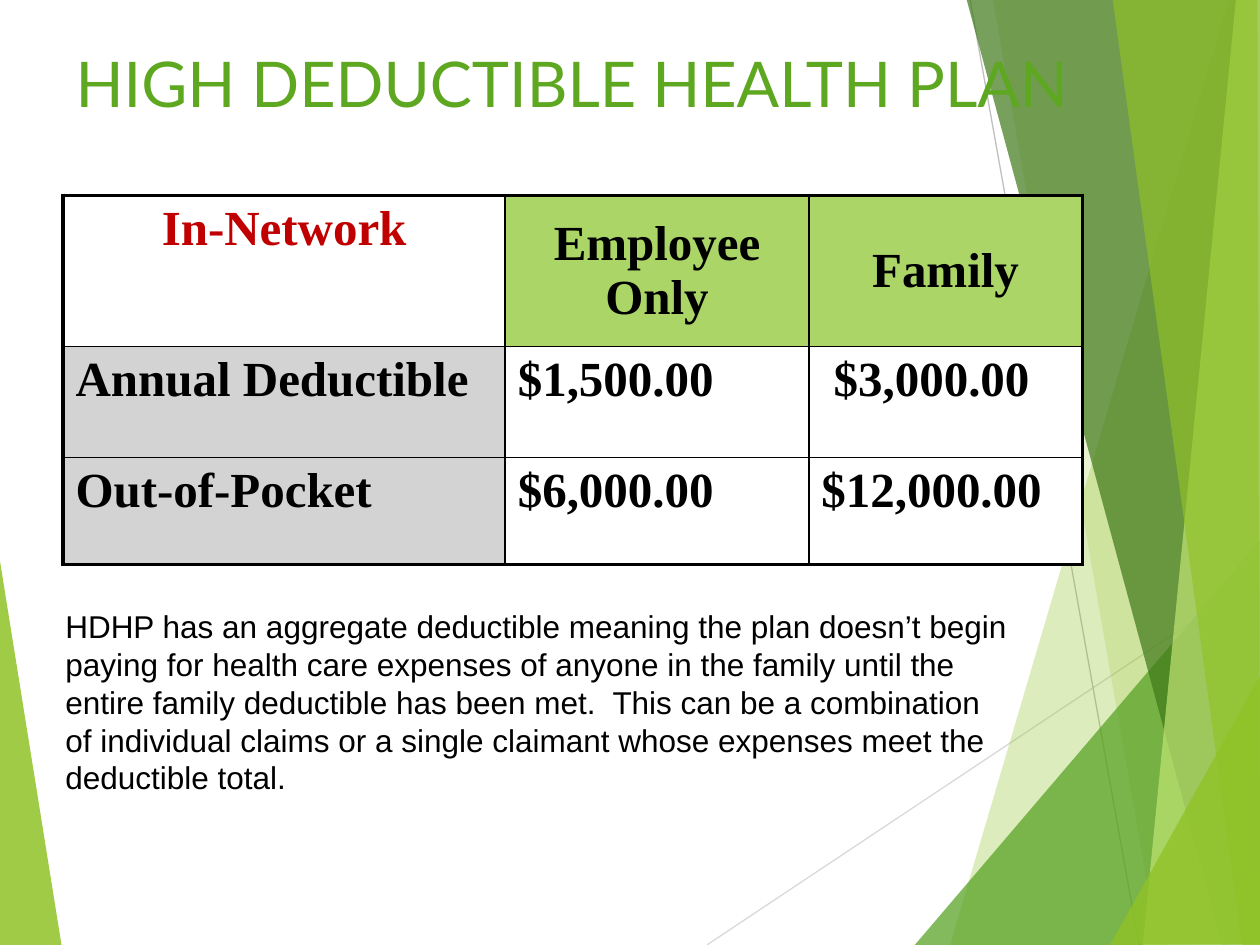
"""Builds the slide on the high deductible health plan."""
import dataclasses

import lxml.etree
import pptx
import pptx.dml.color
import pptx.enum.shapes
import pptx.enum.text
import pptx.oxml.ns
import pptx.util

PX = 9144
WIDTH, HEIGHT = 1000, 750
ALIGN = pptx.enum.text.PP_ALIGN
ANCHOR = pptx.enum.text.MSO_ANCHOR


@dataclasses.dataclass(frozen=True)
class Theme:
    lime: str = "90C226"
    green: str = "54A021"
    forest: str = "3F7819"
    pale: str = "C0E474"
    title: str = "5EA720"
    accent: str = "C00000"
    ink: str = "000000"
    white: str = "FFFFFF"
    header: str = "ABD566"
    label: str = "D3D3D3"
    light_ray: str = "D9D9D9"
    dark_ray: str = "BFBFBF"
    title_font: str = "Lato"
    table_font: str = "Times New Roman"
    body_font: str = "Arial"
    title_size: int = 36
    table_size: int = 28
    body_size: int = 18
    ray_width: float = 0.75
    rule: float = 1
    frame: float = 2.25


THEME = Theme()

RAYS = [
    ((561, 750), (1001, 457), THEME.light_ray),
    ((770, 0), (904, 750), THEME.dark_ray),
]
FACETS = [
    (THEME.lime, 85, [(-1, 439), (49, 751), (-1, 750)]),
    (THEME.lime, 30, [(975, 0), (754, 750), (1002, 751), (1001, 1)]),
    (THEME.lime, 20, [(788, -1), (919, 750), (1001, 750), (1001, -1)]),
    (THEME.green, 72, [(726, 750), (1000, 429), (1001, 750)]),
    (THEME.forest, 70, [(767, -1), (970, 750), (1001, 749), (1001, -1)]),
    (THEME.pale, 70, [(981, -1), (907, 750), (1001, 750), (1000, -1)]),
    (THEME.lime, 65, [(883, -1), (986, 750), (1000, 750), (998, -1)]),
    (THEME.lime, 80, [(881, 750), (1001, 535), (1001, 749)]),
]
TITLE = "HIGH DEDUCTIBLE HEALTH PLAN"
COLUMNS = [351, 241, 217]
ROWS = [120, 88, 85]
PLAN = [
    ["In-Network", "Employee Only", "Family"],
    ["Annual Deductible", "$1,500.00", " $3,000.00"],
    ["Out-of-Pocket", "$6,000.00", "$12,000.00"],
]
EXPLANATION = (
    "HDHP has an aggregate deductible meaning the plan doesn’t begin paying for "
    "health care expenses of anyone in the family until the entire family "
    "deductible has been met.  This can be a combination of individual claims or "
    "a single claimant whose expenses meet the deductible total."
)


def px(length):
    """Turn whole px into EMU."""
    return pptx.util.Emu(length * PX)


def rgb(color):
    """Turn a hex string into a colour."""
    return pptx.dml.color.RGBColor.from_string(color)


def write(frame, text, font, size, color, bold=False, align=ALIGN.LEFT):
    """Set one paragraph of text and format it."""
    frame.text = text
    paragraph = frame.paragraphs[0]
    paragraph.alignment = align
    style = paragraph.runs[0].font
    style.name, style.size, style.bold = font, pptx.util.Pt(size), bold
    style.color.rgb = rgb(color)


def add_ray(slide, start, end, color):
    """Draw a thin background line."""
    ray = slide.shapes.add_connector(
        pptx.enum.shapes.MSO_CONNECTOR.STRAIGHT, *map(px, start + end))
    ray.line.color.rgb = rgb(color)
    ray.line.width = pptx.util.Pt(THEME.ray_width)
    lxml.etree.SubElement(ray._element.spPr, pptx.oxml.ns.qn("a:effectLst"))


def add_facet(slide, color, opacity, corners):
    """Draw a translucent background polygon."""
    outline = slide.shapes.build_freeform(*corners[0], scale=PX)
    outline.add_line_segments(corners[1:], close=True)
    facet = outline.convert_to_shape()
    facet.shadow.inherit = False
    facet.line.fill.background()
    facet.fill.solid()
    facet.fill.fore_color.rgb = rgb(color)
    tint = facet._element.spPr.find(".//" + pptx.oxml.ns.qn("a:srgbClr"))
    alpha = lxml.etree.SubElement(tint, pptx.oxml.ns.qn("a:alpha"))
    alpha.set("val", str(opacity * 1000))


def place_title(slide):
    """Move the title in front of the background and format it."""
    title = slide.shapes.title
    slide.shapes._spTree.append(title._element)
    title.left, title.top, title.width, title.height = map(px, (50, 30, 900, 125))
    write(title.text_frame, TITLE, THEME.title_font, THEME.title_size, THEME.title)
    title.text_frame.vertical_anchor = ANCHOR.TOP


def set_borders(cell, widths):
    """Give a cell its left, right, top and bottom rules."""
    properties = cell._tc.get_or_add_tcPr()
    for position, (side, width) in enumerate(zip("LRTB", widths)):
        border = lxml.etree.Element(
            pptx.oxml.ns.qn("a:ln" + side), w=str(pptx.util.Pt(width)))
        fill = lxml.etree.SubElement(border, pptx.oxml.ns.qn("a:solidFill"))
        lxml.etree.SubElement(fill, pptx.oxml.ns.qn("a:srgbClr"), val=THEME.ink)
        properties.insert(position, border)


def format_cell(cell, text, row, column):
    """Fill, frame and write one cell by its place in the table."""
    heading, corner = row == 0, row == column == 0
    background = THEME.white
    if heading and not corner:
        background = THEME.header
    elif column == 0 and not corner:
        background = THEME.label
    cell.fill.solid()
    cell.fill.fore_color.rgb = rgb(background)
    outer = (column == 0, column == len(COLUMNS) - 1, row == 0, row == len(ROWS) - 1)
    set_borders(cell, [THEME.frame if edge else THEME.rule for edge in outer])
    cell.vertical_anchor = ANCHOR.MIDDLE if heading and not corner else ANCHOR.TOP
    write(cell.text_frame, text, THEME.table_font, THEME.table_size,
          THEME.accent if corner else THEME.ink, True,
          ALIGN.CENTER if heading else ALIGN.LEFT)


def add_plan_table(slide):
    """Add the table of in-network amounts."""
    table = slide.shapes.add_table(
        len(ROWS), len(COLUMNS),
        *map(px, (50, 155, sum(COLUMNS), sum(ROWS)))).table
    table.first_row = table.horz_banding = False
    for column, width in zip(table.columns, COLUMNS):
        column.width = px(width)
    for row, height in zip(table.rows, ROWS):
        row.height = px(height)
    for row, texts in enumerate(PLAN):
        for column, text in enumerate(texts):
            format_cell(table.cell(row, column), text, row, column)


def add_explanation(slide):
    """Add the paragraph below the table."""
    frame = slide.shapes.add_textbox(*map(px, (42, 477, 769, 162))).text_frame
    frame.word_wrap = True
    write(frame, EXPLANATION, THEME.body_font, THEME.body_size, THEME.ink)


def main():
    """Build and save the slide."""
    deck = pptx.Presentation()
    deck.slide_width, deck.slide_height = px(WIDTH), px(HEIGHT)
    slide = deck.slides.add_slide(deck.slide_layouts.get_by_name("Title Only"))
    for ray in RAYS:
        add_ray(slide, *ray)
    for facet in FACETS:
        add_facet(slide, *facet)
    place_title(slide)
    add_plan_table(slide)
    add_explanation(slide)
    deck.save("out.pptx")


if __name__ == "__main__":
    main()
